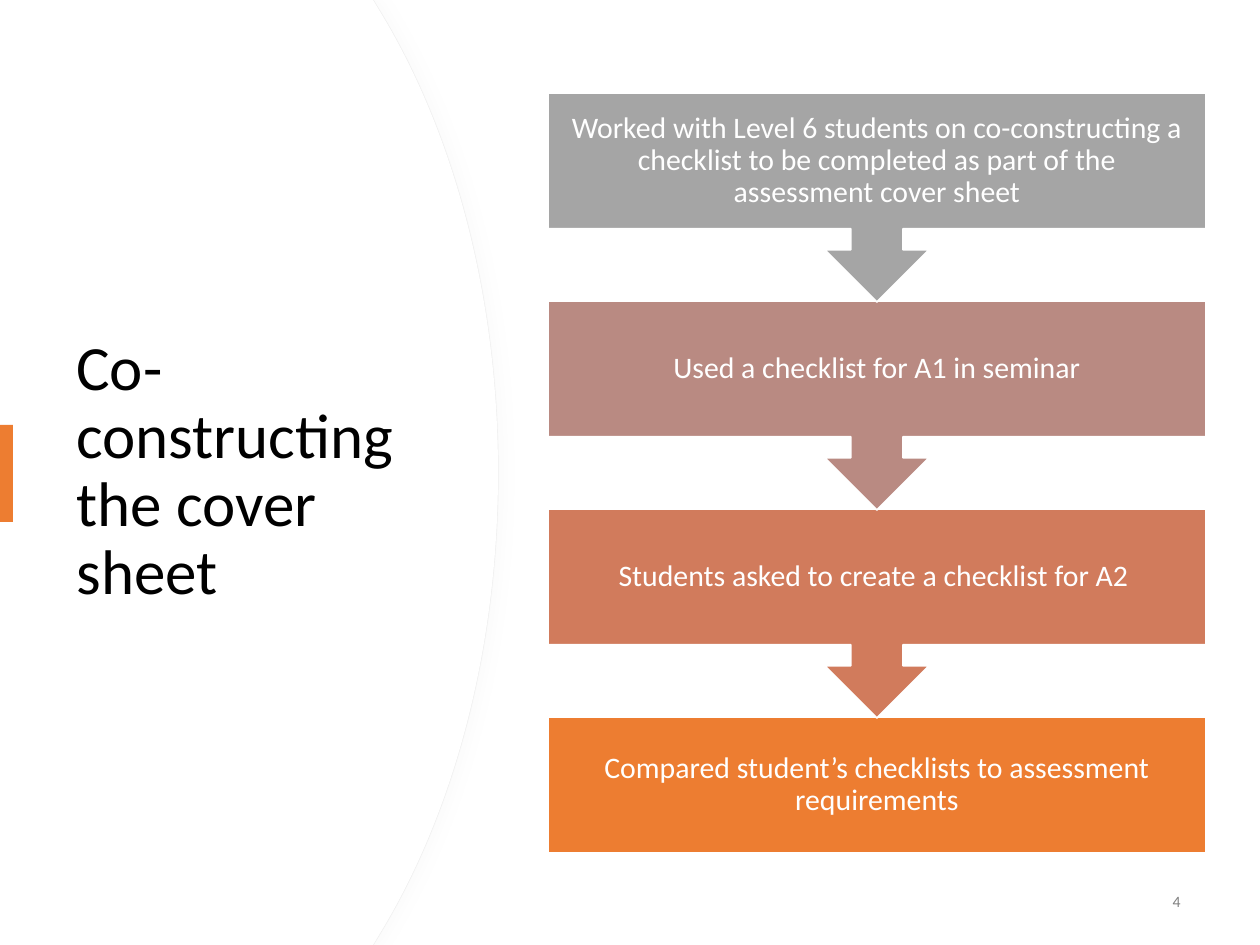
from dataclasses import dataclass

from lxml.etree import SubElement
from pptx import Presentation
from pptx.dml.color import RGBColor
from pptx.enum.shapes import MSO_SHAPE as Shape
from pptx.enum.text import MSO_ANCHOR as Anchor, PP_ALIGN as Align
from pptx.oxml.ns import qn
from pptx.util import Emu, Pt

EMU_PER_PX = 914400 / 126
SLIDE_WIDTH, SLIDE_HEIGHT = 1260, 945


@dataclass(frozen=True)
class Theme:
    font: str = "Calibri"
    white: str = "FFFFFF"
    black: str = "000000"
    accent: str = "ED7D31"
    page_grey: str = "808080"
    panel_edge: str = "EFEFEF"
    panel_shadow: str = "D9D9D9"
    title_size: int = 36
    step_size: int = 17
    page_size: int = 9


THEME = Theme()
STEPS = [
    ("Worked with Level 6 students on co-constructing a checklist to be "
     "completed as part of the assessment cover sheet", "A5A5A5"),
    ("Used a checklist for A1 in seminar", "B98A82"),
    ("Students asked to create a checklist for A2 ", "D17B5C"),
    ("Compared student’s checklists to assessment requirements", THEME.accent),
]


def px(length):
    return Emu(round(length * EMU_PER_PX))


def paint(shape, fill, line=None, line_width=1):
    shape.shadow.inherit = False
    shape.fill.solid()
    shape.fill.fore_color.rgb = RGBColor.from_string(fill)
    if line:
        shape.line.color.rgb = RGBColor.from_string(line)
        shape.line.width = Pt(line_width)
    else:
        shape.line.fill.background()


def write(shape, text, size, color, align=Align.LEFT, spacing=1.0, inset=None):
    frame = shape.text_frame
    frame.text = text
    frame.word_wrap = True
    frame.vertical_anchor = Anchor.MIDDLE
    if inset is not None:
        frame.margin_left = frame.margin_right = px(inset)
        frame.margin_top = frame.margin_bottom = px(inset)
    paragraph = frame.paragraphs[0]
    paragraph.alignment = align
    paragraph.line_spacing = spacing
    font = paragraph.runs[0].font
    font.name, font.size = THEME.font, Pt(size)
    font.color.rgb = RGBColor.from_string(color)


def add_soft_shadow(shape):
    effects = shape._element.spPr.find(qn("a:effectLst"))
    shadow = SubElement(effects, qn("a:outerShdw"), blurRad=str(Pt(7)),
                        dist=str(Pt(3)), dir="0", algn="l", rotWithShape="0")
    color = SubElement(shadow, qn("a:srgbClr"), val=THEME.panel_shadow)
    SubElement(color, qn("a:alpha"), val="10000")


def bend(shape, first, count):
    """Turn each three line points, from the given one on, into a Bézier curve."""
    lines = list(shape._element.iter(qn("a:lnTo")))[first:first + 3 * count]
    for start in range(0, len(lines), 3):
        group = lines[start:start + 3]
        curve = SubElement(group[0].getparent(), qn("a:cubicBezTo"))
        group[0].addprevious(curve)
        for line in group:
            curve.append(line[0])
            line.getparent().remove(line)


def add_curved_panel(slide, left, top, width, height):
    # Right edge bulges to the middle; the lower half mirrors the upper
    upper = [(width - 125, 0), (width - 119, 10), (width - 46, 129),
             (width, 292), (width, height / 2)]
    lower = [(x, height - y) for x, y in reversed(upper[:-1])]
    points = [(px(left + x), px(top + y)) for x, y in upper + lower + [(0, height)]]

    # Outlined layer with shadow, then a plain layer on top
    for outlined in (True, False):
        builder = slide.shapes.build_freeform(px(left), px(top), scale=1.0)
        builder.add_line_segments(points, close=True)
        panel = builder.convert_to_shape()
        bend(panel, first=2, count=2)
        paint(panel, THEME.white, THEME.panel_edge if outlined else None, 0.75)
        if outlined:
            add_soft_shadow(panel)


def add_title(slide, left, top, width, height):
    title = slide.shapes.add_textbox(px(left), px(top), px(width), px(height))
    write(title, "Co-constructing the cover sheet", THEME.title_size,
          THEME.black, spacing=0.9)


def add_accent_bar(slide, left, top, width, height):
    bar = slide.shapes.add_shape(Shape.RECTANGLE, px(left), px(top),
                                 px(width), px(height))
    paint(bar, THEME.accent)


def add_page_number(slide, left, top, width, height):
    number = slide.shapes.add_textbox(px(left), px(top), px(width), px(height))
    write(number, "4", THEME.page_size, THEME.page_grey, Align.RIGHT)


def add_steps(slide, left, top, width, height):
    box_height = 136
    last = len(STEPS) - 1
    pitch = (height - box_height) / last
    # Bottom step first, so each arrow tip lies over the next box
    for index, (text, color) in reversed(list(enumerate(STEPS))):
        kind = Shape.RECTANGLE if index == last else Shape.DOWN_ARROW_CALLOUT
        step_height = box_height if index == last else pitch + 1
        step = slide.shapes.add_shape(kind, px(left), px(top + index * pitch),
                                      px(width), px(step_height))
        paint(step, color, THEME.white)
        write(step, text, THEME.step_size, THEME.white, Align.CENTER,
              spacing=0.9, inset=18)


def main():
    presentation = Presentation()
    presentation.slide_width = px(SLIDE_WIDTH)
    presentation.slide_height = px(SLIDE_HEIGHT)
    slide = presentation.slides.add_slide(presentation.slide_layouts[6])
    add_curved_panel(slide, 0, 0, 498, SLIDE_HEIGHT)
    add_title(slide, 64, 160, 373, 624)
    add_accent_bar(slide, 0, 425, 13, 97)
    add_page_number(slide, 909, 876, 284, 50)
    add_steps(slide, 548, 93, 658, 760)
    presentation.save("out.pptx")


if __name__ == "__main__":
    main()
